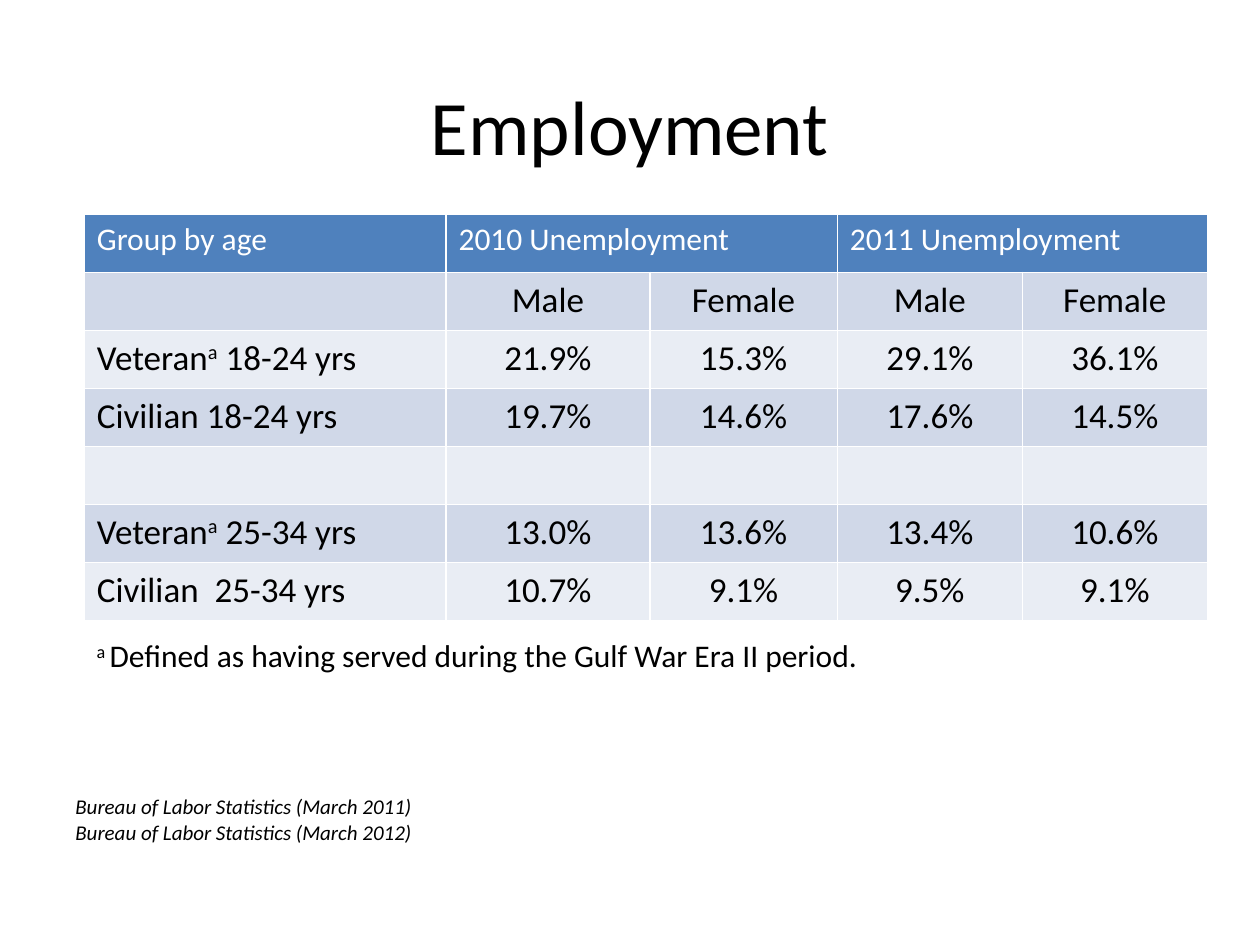
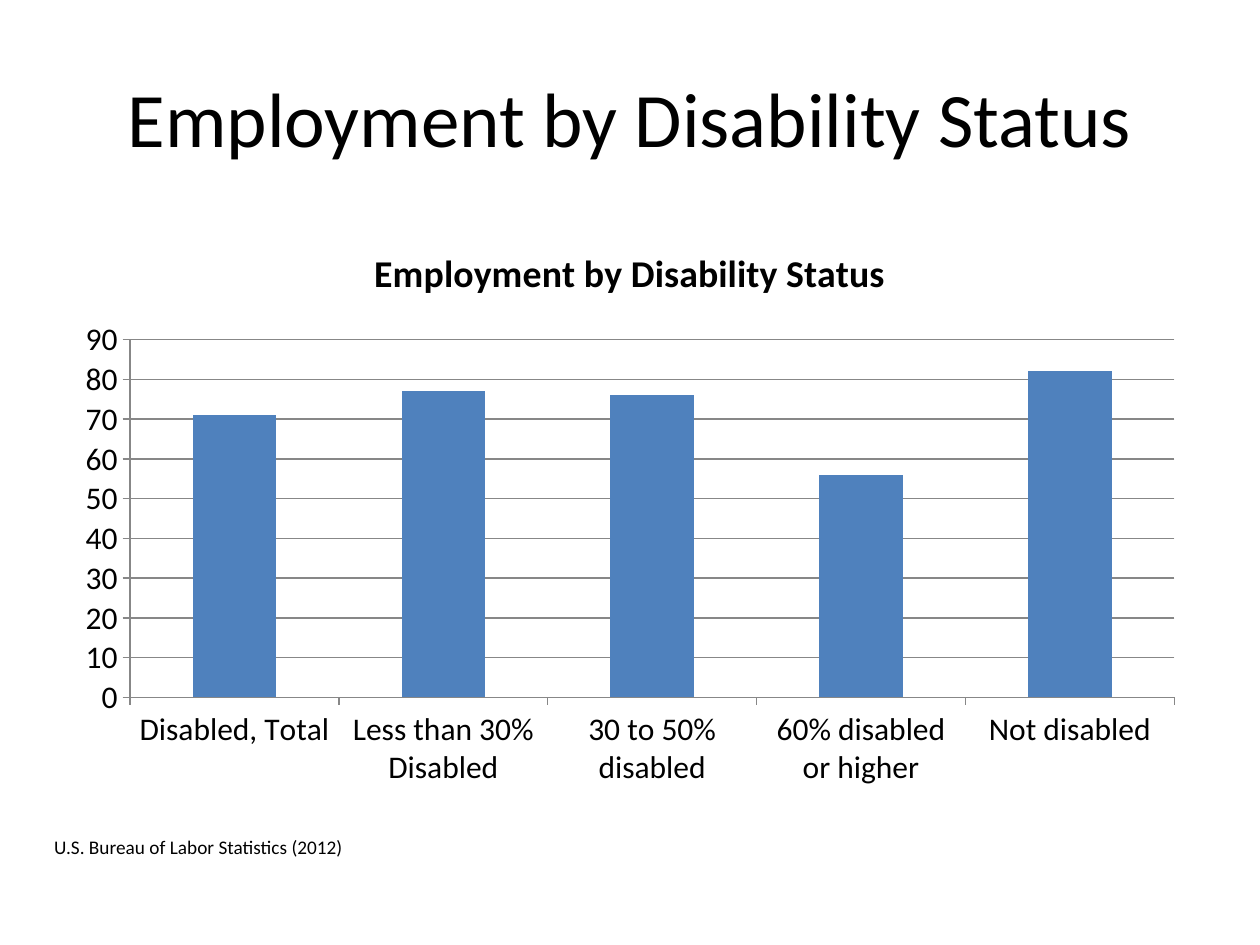
import pptx
import pptx.chart.data
import pptx.dml.color
import pptx.enum.chart
import pptx.enum.text
import pptx.util
import lxml.etree

Cm = pptx.util.Cm
Pt = pptx.util.Pt
ALIGN = pptx.enum.text.PP_ALIGN
ANCHOR = pptx.enum.text.MSO_ANCHOR
FONT = "Calibri"
BLACK, WHITE, BLUE, GREY = "000000", "FFFFFF", "4F81BD", "878787"
BANDS = ("D0D8E8", "E9EDF4")


def rgb(value):
    return pptx.dml.color.RGBColor.from_string(value)


def style_font(font, size, color=BLACK, bold=False, italic=False):
    font.name = FONT
    font.size = Pt(size)
    font.bold = bold
    font.italic = italic
    font.color.rgb = rgb(color)


def write(frame, text, size=18, align=ALIGN.LEFT, **look):
    """Fill a frame line by line; text between carets is superscript."""
    for number, line in enumerate(text.split("\n")):
        paragraph = frame.add_paragraph() if number else frame.paragraphs[0]
        paragraph.alignment = align
        for position, part in enumerate(line.split("^")):
            if part:
                run = paragraph.add_run()
                run.text = part
                style_font(run.font, size, **look)
                if position % 2:
                    run.font._element.set("baseline", "30000")


def border_cell(cell, color=WHITE, width=1):
    properties = cell._tc.get_or_add_tcPr()
    for side in ("a:lnL", "a:lnR", "a:lnT", "a:lnB"):
        edge = lxml.etree.SubElement(
            properties, pptx.oxml.ns.qn(side), w=str(Pt(width)))
        fill = lxml.etree.SubElement(edge, pptx.oxml.ns.qn("a:solidFill"))
        lxml.etree.SubElement(fill, pptx.oxml.ns.qn("a:srgbClr"), val=color)


class Deck:
    """Hold the presentation, its style and the current slide."""

    def __init__(self):
        self.presentation = pptx.Presentation()
        self.presentation.slide_width = Cm(25.4)
        self.presentation.slide_height = Cm(19.05)
        self.slide = None

    def new_slide(self, title, top, height):
        layout = self.presentation.slide_layouts[6]
        self.slide = self.presentation.slides.add_slide(layout)
        self.text(title, 1.27, top, 22.86, height, anchor=ANCHOR.MIDDLE,
                  size=44, align=ALIGN.CENTER)

    def text(self, text, left, top, width, height, anchor=ANCHOR.TOP, **look):
        box = self.slide.shapes.add_textbox(
            Cm(left), Cm(top), Cm(width), Cm(height))
        box.text_frame.word_wrap = True
        box.text_frame.vertical_anchor = anchor
        write(box.text_frame, text, **look)

    def table(self, rows, left, top, widths, row_height):
        table = self.slide.shapes.add_table(
            len(rows), len(widths), Cm(left), Cm(top),
            Cm(sum(widths)), Cm(row_height * len(rows))).table
        for column, width in zip(table.columns, widths):
            column.width = Cm(width)
        for r, row in enumerate(rows):
            table.rows[r].height = Cm(row_height)
            for c, value in enumerate(row):
                cell = table.cell(r, c)
                border_cell(cell)
                cell.fill.solid()
                cell.fill.fore_color.rgb = rgb(BANDS[(r - 1) % 2] if r else BLUE)
                if r == 0:
                    write(cell.text_frame, value, color=WHITE)
                else:
                    write(cell.text_frame, value, size=20,
                          align=ALIGN.CENTER if c else ALIGN.LEFT)
        return table

    def column_chart(self, title, values, left, top, width, height):
        data = pptx.chart.data.CategoryChartData()
        data.categories = list(values)
        data.add_series("Series 1", list(values.values()))
        chart = self.slide.shapes.add_chart(
            pptx.enum.chart.XL_CHART_TYPE.COLUMN_CLUSTERED,
            Cm(left), Cm(top), Cm(width), Cm(height), data).chart
        style_font(chart.font, 18)
        chart.has_legend = False
        chart.has_title = True
        write(chart.chart_title.text_frame, title, size=21.6,
              align=ALIGN.CENTER, bold=True)
        chart.chart_title.include_in_layout = False
        plot = chart.plots[0]
        plot.gap_width = 150
        plot.vary_by_categories = False
        bars = plot.series[0].format.fill
        bars.solid()
        bars.fore_color.rgb = rgb(BLUE)
        scale = chart.value_axis
        scale.minimum_scale, scale.maximum_scale = 0, 90
        scale.major_unit = 10
        scale.has_major_gridlines = True
        for axis in (chart.category_axis, scale):
            axis.major_tick_mark = pptx.enum.chart.XL_TICK_MARK.OUTSIDE
        for part in (chart.category_axis, scale, scale.major_gridlines):
            part.format.line.color.rgb = rgb(GREY)
            part.format.line.width = Pt(0.75)


def employment(deck):
    deck.new_slide("Employment", 1.07, 2.87)
    rates = deck.table([
        ("Group by age", "2010 Unemployment", "", "2011 Unemployment", ""),
        ("", "Male", "Female", "Male", "Female"),
        ("Veteran^a^ 18-24 yrs", "21.9%", "15.3%", "29.1%", "36.1%"),
        ("Civilian 18-24 yrs", "19.7%", "14.6%", "17.6%", "14.5%"),
        ("", "", "", "", ""),
        ("Veteran^a^ 25-34 yrs", "13.0%", "13.6%", "13.4%", "10.6%"),
        ("Civilian  25-34 yrs", "10.7%", "9.1%", "9.5%", "9.1%"),
    ], 1.7, 4.32, (7.29, 4.11, 3.78, 3.73, 3.73), 1.17)
    for year in (1, 3):
        rates.cell(0, year).merge(rates.cell(0, year + 1))
    deck.text("^a ^Defined as having served during the Gulf War Era II period.",
              1.7, 12.7, 19.18, 2.57)
    deck.text("Bureau of Labor Statistics (March 2011)\n"
              "Bureau of Labor Statistics (March 2012)",
              1.27, 15.88, 24.0, 1.27, size=12, italic=True)


def disability(deck):
    heading = "Employment by Disability Status"
    deck.new_slide(heading, 0.76, 3.18)
    deck.column_chart(heading, {
        "Disabled, Total": 71,
        "Less than 30% Disabled": 77,
        "30 to 50% disabled": 76,
        "60% disabled or higher": 56,
        "Not disabled": 82,
    }, 1.27, 4.45, 22.86, 11.63)
    deck.text("U.S. Bureau of Labor Statistics (2012)",
              0.84, 16.71, 23.5, 0.74, size=11)


def main():
    deck = Deck()
    employment(deck)
    disability(deck)
    deck.presentation.save("out.pptx")


if __name__ == "__main__":
    main()
